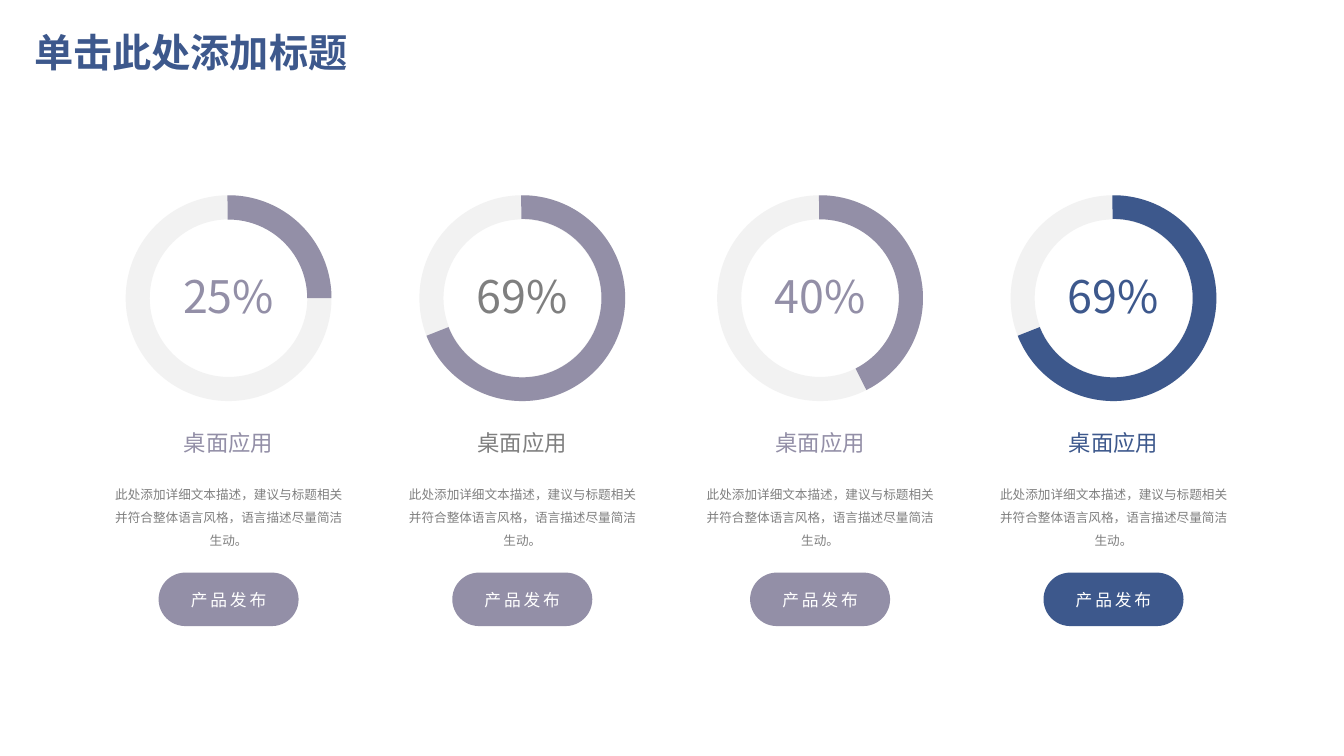
"""Build a slide with four progress rings, each with a label, description and button."""
from lxml import etree
from pptx import Presentation
from pptx.dml.color import RGBColor
from pptx.enum.shapes import MSO_SHAPE
from pptx.enum.text import MSO_ANCHOR, MSO_AUTO_SIZE, PP_ALIGN
from pptx.oxml.ns import qn
from pptx.util import Pt

DONUT, ARC, PILL = MSO_SHAPE.DONUT, MSO_SHAPE.BLOCK_ARC, MSO_SHAPE.ROUNDED_RECTANGLE
CENTER, LEFT = PP_ALIGN.CENTER, PP_ALIGN.LEFT
TOP, MIDDLE = MSO_ANCHOR.TOP, MSO_ANCHOR.MIDDLE
FIXED = MSO_AUTO_SIZE.NONE

BLUE = RGBColor(0x3D, 0x58, 0x8C)
MAUVE = RGBColor(0x93, 0x8F, 0xA7)
GRAY = RGBColor(0x7F, 0x7F, 0x7F)
TRACK = RGBColor(0xF2, 0xF2, 0xF2)
WHITE = RGBColor(0xFF, 0xFF, 0xFF)
CJK_FONT, TITLE_FONT = "Noto Sans CJK SC", "Montserrat"

TITLE = "单击此处添加标题"
LABEL = "桌面应用"
DESCRIPTION = "此处添加详细文本描述，建议与标题相关并符合整体语言风格，语言描述尽量简洁生动。"
BUTTON = "产品发布"
# center x, percentage, arc end in degrees, arc thickness, arc color, text color
COLUMNS = [
    (163.3, "25%", 0, 0.118, MAUVE, MAUVE),
    (373.1, "69%", 158.56, 0.115, MAUVE, GRAY),
    (585.8, "40%", 63.23, 0.117, MAUVE, MAUVE),
    (795.4, "69%", 158.56, 0.115, BLUE, BLUE),
]
ARC_START = 269.37
DEGREE = 0.6
TRACK_THICKNESS = 0.117

RING = (139.5, 147, 147)
PERCENT = (188.6, 81.4, 46)
LABEL_BOX = (308.9, 162, 29.5)
DESCRIPTION_BOX = (342.7, 162, 90)
BUTTON_BOX = (409, 100, 38.2)


def place(center, band):
    top, width, height = band
    return Pt(center - width / 2), Pt(top), Pt(width), Pt(height)


def write(shape, text, size, color, font=CJK_FONT, align=CENTER, anchor=TOP,
          line=1.0, inset=None, wrap=True, tracking=0, bold=False):
    frame = shape.text_frame
    frame.text = text
    frame.word_wrap, frame.auto_size, frame.vertical_anchor = wrap, FIXED, anchor
    if inset is not None:
        frame.margin_left = frame.margin_right = Pt(inset)
        frame.margin_top = frame.margin_bottom = Pt(inset)
    paragraph = frame.paragraphs[0]
    paragraph.alignment, paragraph.line_spacing = align, line
    paragraph.space_before = Pt(0)
    style = paragraph.font
    style.size, style.bold, style.name = Pt(size), bold, font
    style.color.rgb = color
    properties = paragraph._p.pPr.find(qn("a:defRPr"))
    etree.SubElement(properties, qn("a:ea")).set("typeface", CJK_FONT)
    if tracking:
        properties.set("spc", str(tracking * 100))


def add_solid(shapes, kind, center, band, color, adjustments):
    shape = shapes.add_shape(kind, *place(center, band))
    shape.shadow.inherit = False
    shape.fill.solid()
    shape.fill.fore_color.rgb = color
    shape.line.fill.background()
    for index, value in enumerate(adjustments):
        shape.adjustments[index] = value
    return shape


def add_column(shapes, center, percent, arc_end, thickness, color, text_color):
    write(shapes.add_textbox(*place(center, DESCRIPTION_BOX)), DESCRIPTION, 9, GRAY,
          line=1.5, inset=0)
    write(shapes.add_textbox(*place(center, LABEL_BOX)), LABEL, 16, text_color,
          line=0.9, inset=0)
    ring = shapes.add_group_shape().shapes
    add_solid(ring, DONUT, center, RING, TRACK, [TRACK_THICKNESS])
    add_solid(ring, ARC, center, RING, color,
              [ARC_START * DEGREE, arc_end * DEGREE, thickness])
    button = add_solid(shapes, PILL, center, BUTTON_BOX, color, [0.5])
    write(button, BUTTON, 12, WHITE, anchor=MIDDLE, tracking=2)
    write(shapes.add_textbox(*place(center, PERCENT)), percent, 32, text_color, wrap=False)


def main():
    deck = Presentation()
    deck.slide_width, deck.slide_height = Pt(960), Pt(540)
    slide = deck.slides.add_slide(deck.slide_layouts[5])
    title = slide.shapes.title
    title.left, title.top, title.width, title.height = Pt(17.3), Pt(17.3), Pt(828), Pt(43.2)
    write(title, TITLE, 28, BLUE, font=TITLE_FONT, align=LEFT, anchor=MIDDLE,
          line=0.9, bold=True)
    for column in COLUMNS:
        add_column(slide.shapes, *column)
    deck.save("out.pptx")


if __name__ == "__main__":
    main()
